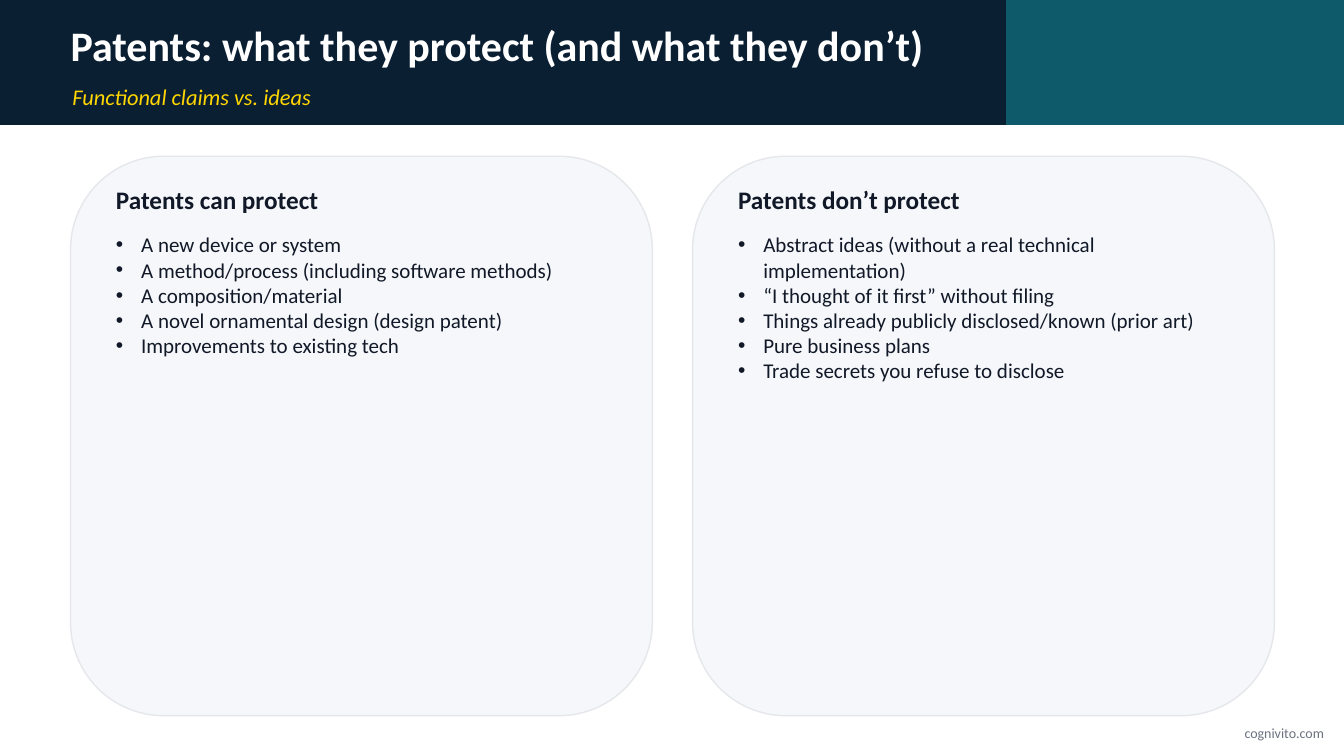
from lxml import etree
from pptx import Presentation
from pptx.dml.color import RGBColor
from pptx.enum.shapes import MSO_SHAPE
from pptx.enum.text import MSO_ANCHOR, MSO_AUTO_SIZE, PP_ALIGN
from pptx.oxml.ns import qn
from pptx.util import Pt

PX = 9144  # EMU per px, 100 px to the inch
COMPARISON_LAYOUT = 4
RECTANGLE, ROUNDED = MSO_SHAPE.RECTANGLE, MSO_SHAPE.ROUNDED_RECTANGLE
LEFT, RIGHT = PP_ALIGN.LEFT, PP_ALIGN.RIGHT
TOP, MIDDLE = MSO_ANCHOR.TOP, MSO_ANCHOR.MIDDLE

NAVY, TEAL, WHITE = "0B1F33", "0E5A6B", "FFFFFF"
YELLOW, GREY, INK = "FFD600", "6B7280", "111827"
CARD_FILL, CARD_LINE = "F5F7FA", "E5E7EB"

TITLE = {"size": 30, "bold": True, "color": WHITE}
SUBTITLE = {"size": 16, "italic": True, "color": YELLOW}
HEADING = {"size": 18, "bold": True, "color": INK}
ITEM = {"size": 15, "bold": False, "color": INK}
FOOTER = {"size": 10, "color": GREY}

CARD_LEFT, CARD_STEP, INDENT = 70, 617, 25
CARDS = [
    ("Patents can protect", [
        "A new device or system",
        "A method/process (including software methods)",
        "A composition/material",
        "A novel ornamental design (design patent)",
        "Improvements to existing tech",
    ]),
    ("Patents don’t protect", [
        "Abstract ideas (without a real technical implementation)",
        "“I thought of it first” without filing",
        "Things already publicly disclosed/known (prior art)",
        "Pure business plans",
        "Trade secrets you refuse to disclose",
    ]),
]


def rgb(value):
    return RGBColor.from_string(value)


def emu(*lengths):
    return [length * PX for length in lengths]


def add_panel(page, kind, place, fill, line):
    panel = page.shapes.add_shape(kind, *emu(*place))
    panel.shadow.inherit = False
    panel.fill.solid()
    panel.fill.fore_color.rgb = rgb(fill)
    panel.line.color.rgb = rgb(line)
    panel.line.width = Pt(1)


def add_bullet(para):
    properties = para._p.get_or_add_pPr()
    properties.set("marL", str(INDENT * PX))
    properties.set("indent", str(-INDENT * PX))
    etree.SubElement(properties, qn("a:buChar")).set("char", "•")


def format_span(span, style):
    values = {**style, "size": Pt(style["size"]), "name": "Calibri"}
    span.font.color.rgb = rgb(values.pop("color"))
    for name, value in values.items():
        setattr(span.font, name, value)


def write(box, lines, style, anchor=MIDDLE, align=LEFT, bullets=False):
    frame = box.text_frame
    for name, value in {"word_wrap": True, "auto_size": MSO_AUTO_SIZE.NONE,
                        "vertical_anchor": anchor}.items():
        setattr(frame, name, value)
    for number, line in enumerate(lines):
        para = frame.add_paragraph() if number else frame.paragraphs[0]
        if bullets:
            add_bullet(para)
        para.alignment = align
        para.space_before = Pt(0)
        span = para.add_run()
        span.text = line
        format_span(span, style)


def place_holder(page, index, place):
    """Move a placeholder to its place, in front of the panels."""
    box = page.placeholders[index]
    box.left, box.top, box.width, box.height = emu(*place)
    page.shapes.element.append(box.element)
    return box


def add_label(page, place, text, style, align=LEFT):
    write(page.shapes.add_textbox(*emu(*place)), [text], style, align=align)


def add_card(page, number, heading, items):
    left = CARD_LEFT + number * CARD_STEP
    add_panel(page, ROUNDED, (left, 155, 577, 555), CARD_FILL, CARD_LINE)
    heading_box = place_holder(page, 1 + 2 * number, (left + 35, 180, 507, 35))
    write(heading_box, [heading], HEADING)
    list_box = place_holder(page, 2 + 2 * number, (left + 35, 225, 507, 455))
    write(list_box, items, ITEM, anchor=TOP, bullets=True)


def main():
    deck = Presentation()
    deck.slide_width, deck.slide_height = emu(1333, 750)
    page = deck.slides.add_slide(deck.slide_layouts[COMPARISON_LAYOUT])
    for place, color in [((0, 0, 1333, 125), NAVY),
                         ((998, 0, 335, 125), TEAL),
                         ((0, 125, 1333, 625), WHITE)]:
        add_panel(page, RECTANGLE, place, color, color)
    title = place_holder(page, 0, (60, 22, 913, 45))
    write(title, ["Patents: what they protect (and what they don’t)"], TITLE)
    add_label(page, (62, 78, 913, 35), "Functional claims vs. ideas", SUBTITLE)
    add_label(page, (1083, 715, 240, 25), "cognivito.com", FOOTER, RIGHT)
    for number, (heading, items) in enumerate(CARDS):
        add_card(page, number, heading, items)
    deck.save("out.pptx")


if __name__ == "__main__":
    main()
